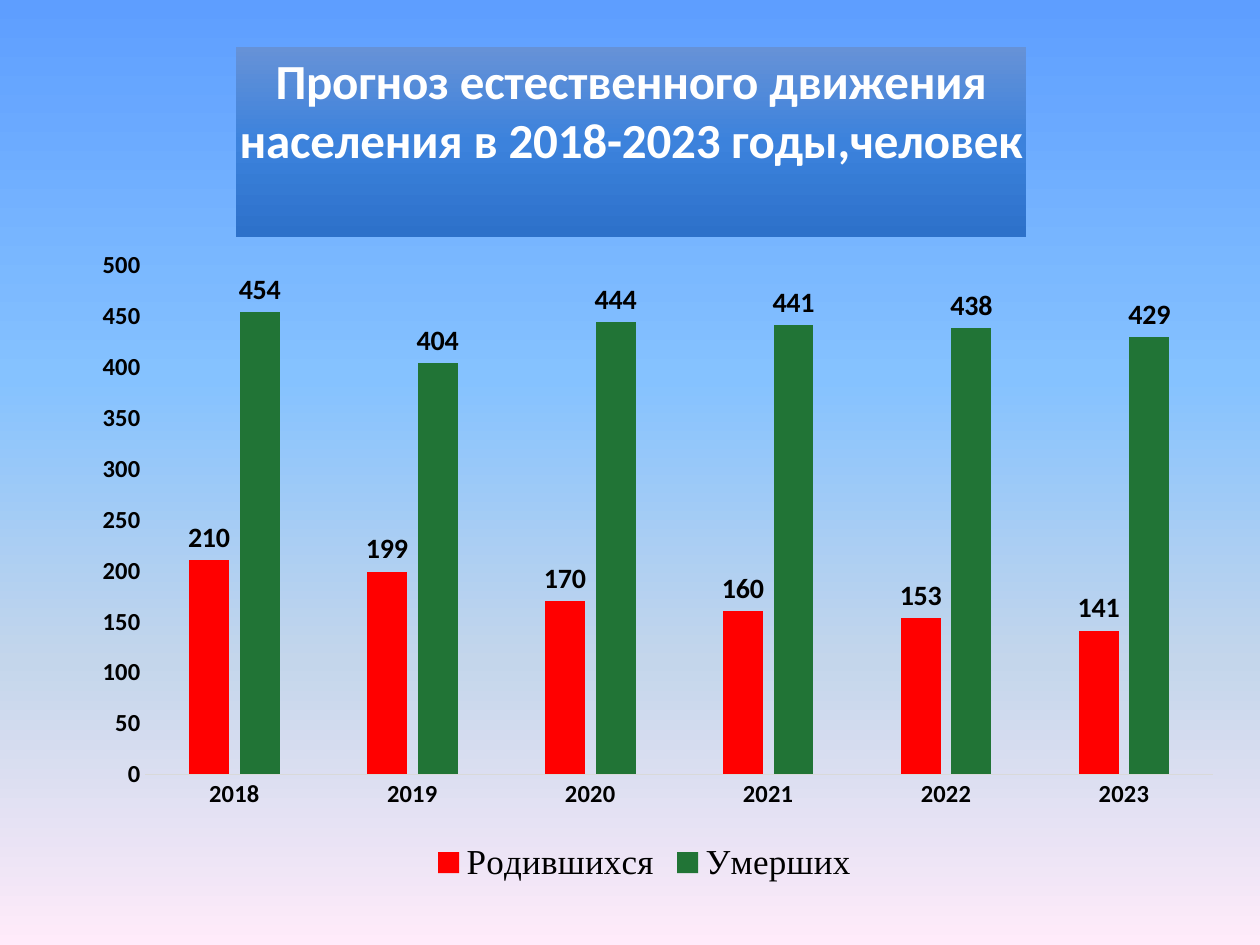
from lxml import etree
from pptx import Presentation
from pptx import util as u
from pptx.chart import data as chart_data
from pptx.dml.color import RGBColor
from pptx.enum import chart as ch, shapes
from pptx.oxml import ns

TITLE = "Прогноз естественного движения населения в 2018-2023 годы,человек"
YEARS = ["2018", "2019", "2020", "2021", "2022", "2023"]
BLACK = RGBColor(0x00, 0x00, 0x00)
WHITE = RGBColor(0xFF, 0xFF, 0xFF)
RED = RGBColor(0xFF, 0x00, 0x00)
GREEN = RGBColor(0x21, 0x74, 0x36)
AXIS_GREY = RGBColor(0xD9, 0xD9, 0xD9)
SERIES = [
    ("Родившихся", [210, 199, 170, 160, 153, 141], RED),
    ("Умерших", [454, 404, 444, 441, 438, 429], GREEN),
]
SKY = [
    (0, RGBColor(0x5E, 0x9E, 0xFF)),
    (40, RGBColor(0x85, 0xC2, 0xFF)),
    (70, RGBColor(0xC4, 0xD6, 0xEB)),
    (100, RGBColor(0xFF, 0xEB, 0xFA)),
]
BANNER = [
    (0, RGBColor(0x66, 0x92, 0xD7)),
    (50, RGBColor(0x3C, 0x82, 0xDC)),
    (100, RGBColor(0x2D, 0x71, 0xCA)),
]
TITLE_FONT = {"name": "Calibri", "size": u.Pt(28), "bold": True}
AXIS_FONT = {"name": "Calibri", "size": u.Pt(14), "bold": True}
LABEL_FONT = {"name": "Calibri", "size": u.Pt(16), "bold": True}
LEGEND_FONT = {"name": "Times New Roman", "size": u.Pt(20), "bold": False}

CHART_AREA = (36.7, 20.9, 663.1, 487.4)
BANNER_AREA = (134.9, 26.9, 451.4, 108.5)
TITLE_CORNER = (131.9, 22.1)
PLOT_LAYOUT = {"layoutTarget": "inner", "xMode": "edge", "yMode": "edge",
               "x": 0.07, "y": 0.268, "w": 0.92, "h": 0.597}


def set_font(font, values, color=BLACK):
    for key, value in values.items():
        setattr(font, key, value)
    font.color.rgb = color


def paint_gradient(fill, owner, stops):
    """Fill the owner element from top to bottom with the given stops."""
    fill.gradient()
    fill.gradient_angle = 270
    stop_list = next(owner.iter(ns.qn("a:gsLst")))
    for old in list(stop_list):
        stop_list.remove(old)
    for percent, color in stops:
        stop = etree.SubElement(stop_list, ns.qn("a:gs"), pos=str(percent * 1000))
        etree.SubElement(stop, ns.qn("a:srgbClr"), val=str(color))


def set_layout(parent, values, position):
    """Place a chart part by fractions of the chart area."""
    for old in parent.findall(ns.qn("c:layout")):
        parent.remove(old)
    layout = etree.Element(ns.qn("c:layout"))
    manual = etree.SubElement(layout, ns.qn("c:manualLayout"))
    for tag, value in values.items():
        etree.SubElement(manual, ns.qn("c:" + tag), val=str(value))
    parent.insert(position, layout)


def add_banner(slide):
    banner = slide.shapes.add_shape(shapes.MSO_SHAPE.RECTANGLE, *map(u.Pt, BANNER_AREA))
    banner.shadow.inherit = False
    banner.line.fill.background()
    paint_gradient(banner.fill, banner.element, BANNER)


def add_population_chart(slide):
    content = chart_data.CategoryChartData()
    content.categories = YEARS
    for name, values, _ in SERIES:
        content.add_series(name, values)
    chart = slide.shapes.add_chart(ch.XL_CHART_TYPE.COLUMN_CLUSTERED,
                                   *map(u.Pt, CHART_AREA), content).chart
    chart.font.name, chart.font.size = "Calibri", u.Pt(10)

    chart.has_title = True
    title = chart.chart_title
    title.text_frame.text = TITLE
    set_font(title.text_frame.paragraphs[0].runs[0].font, TITLE_FONT, WHITE)
    left, top, width, height = CHART_AREA
    set_layout(title._element, {
        "xMode": "edge", "yMode": "edge",
        "x": (TITLE_CORNER[0] - left) / width,
        "y": (TITLE_CORNER[1] - top) / height}, 1)

    plot = chart.plots[0]
    plot.gap_width, plot.overlap, plot.vary_by_categories = 219, -27, False
    set_layout(chart._chartSpace.chart.plotArea, PLOT_LAYOUT, 0)
    for series, (_, _, color) in zip(plot.series, SERIES):
        series.format.fill.solid()
        series.format.fill.fore_color.rgb = color
        labels = series.data_labels
        labels.show_value = True
        labels.position = ch.XL_LABEL_POSITION.OUTSIDE_END
        set_font(labels.font, LABEL_FONT)

    years, people = chart.category_axis, chart.value_axis
    for axis in (years, people):
        axis.major_tick_mark = axis.minor_tick_mark = ch.XL_TICK_MARK.NONE
        axis.has_major_gridlines = False
        set_font(axis.tick_labels.font, AXIS_FONT)
    years.format.line.color.rgb = AXIS_GREY
    years.format.line.width = u.Pt(0.75)
    people.format.line.fill.background()
    people.minimum_scale, people.maximum_scale, people.major_unit = 0, 500, 50

    chart.has_legend = True
    chart.legend.position = ch.XL_LEGEND_POSITION.BOTTOM
    chart.legend.include_in_layout = False
    set_font(chart.legend.font, LEGEND_FONT)


def main():
    deck = Presentation()
    deck.slide_width, deck.slide_height = u.Pt(720), u.Pt(540)
    slide = deck.slides.add_slide(deck.slide_layouts[6])
    paint_gradient(slide.background.fill, slide.element, SKY)
    add_banner(slide)
    add_population_chart(slide)
    deck.save("out.pptx")


if __name__ == "__main__":
    main()
